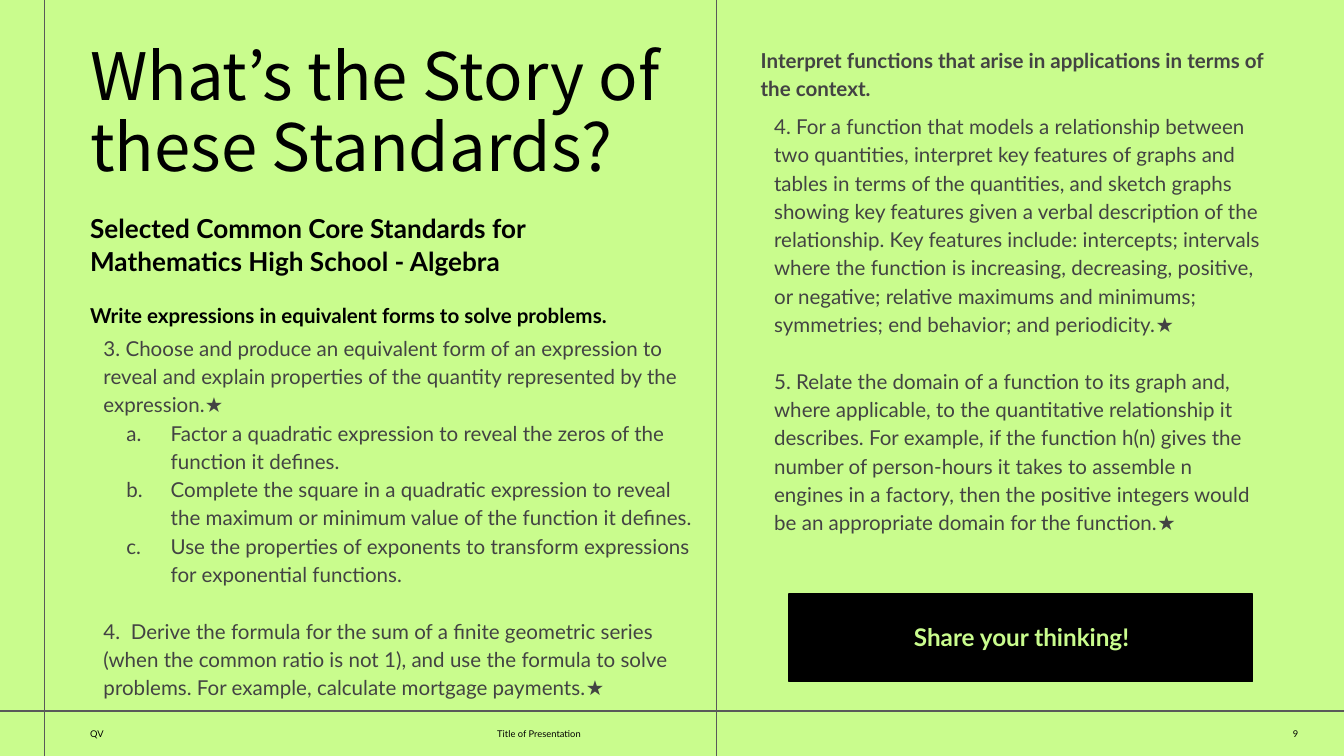
from collections import namedtuple

from lxml import etree
from pptx import Presentation
from pptx import util as u
from pptx.dml.color import RGBColor
from pptx.enum import shapes, text
from pptx.oxml import ns

LIME = RGBColor(0xC9, 0xFC, 0x8D)
BLACK = RGBColor(0, 0, 0)
INK = RGBColor(0x43, 0x43, 0x43)
RULE = RGBColor(0x59, 0x59, 0x59)

WIDTH = 10
HEIGHT = WIDTH * 9 / 16
FOOTER_TOP = 5.29

Box = namedtuple("Box", "left top width height")
Item = namedtuple("Item", "wording lettered gap", defaults=(False, 0))

TITLE = dict(name="Noto Sans CJK KR", size=u.Pt(35), bold=False)
SUBTITLE = dict(name="Lato", size=u.Pt(14), bold=True)
HEADING = dict(name="Lato", size=u.Pt(11), bold=True)
BODY = dict(name="Lato", size=u.Pt(11), bold=False)
BUTTON = dict(name="Lato", size=u.Pt(13), bold=True)
FOOTER = dict(name="Lato", size=u.Pt(5), bold=False)

PARAGRAPH_GAP = 15.2

ALGEBRA = [
    Item("3. Choose and produce an equivalent form of an expression to reveal and explain "
         "properties of the quantity represented by the expression.★"),
    Item("Factor a quadratic expression to reveal the zeros of the function it defines.", True),
    Item("Complete the square in a quadratic expression to reveal the maximum or minimum "
         "value of the function it defines.", True),
    Item("Use the properties of exponents to transform expressions for exponential "
         "functions.", True),
    Item("4.  Derive the formula for the sum of a finite geometric series (when the common "
         "ratio is not 1), and use the formula to solve problems. For example, calculate "
         "mortgage payments.★", gap=PARAGRAPH_GAP),
]
FUNCTIONS = [
    Item("4. For a function that models a relationship between two quantities, interpret key "
         "features of graphs and tables in terms of the quantities, and sketch graphs showing "
         "key features given a verbal description of the relationship. Key features include: "
         "intercepts; intervals where the function is increasing, decreasing, positive, or "
         "negative; relative maximums and minimums; symmetries; end behavior; and "
         "periodicity.★"),
    Item("5. Relate the domain of a function to its graph and, where applicable, to the "
         "quantitative relationship it describes. For example, if the function h(n) gives the "
         "number of person-hours it takes to assemble n engines in a factory, then the "
         "positive integers would be an appropriate domain for the function.★",
         gap=PARAGRAPH_GAP),
]


def apply(target, values):
    for attribute, value in values.items():
        setattr(target, attribute, value)


def inches(box):
    return [u.Inches(length) for length in box]


def set_bullet(paragraph, lettered):
    properties = paragraph._p.get_or_add_pPr()
    properties.set("marL", str(u.Inches(0.5 if lettered else 0)))
    properties.set("indent", str(u.Inches(-0.33 if lettered else 0)))
    if lettered:
        color = etree.SubElement(properties, ns.qn("a:buClr"))
        etree.SubElement(color, ns.qn("a:srgbClr"), val=str(INK))
        etree.SubElement(properties, ns.qn("a:buFont"), typeface="Lato")
        etree.SubElement(properties, ns.qn("a:buAutoNum"), type="alphaLcPeriod")
    else:
        etree.SubElement(properties, ns.qn("a:buNone"))


def write(holder, box, items, font, color=BLACK, spacing=1.0, inset=(0, 0, 0, 0),
          align=text.PP_ALIGN.LEFT, anchor=text.MSO_ANCHOR.TOP):
    apply(holder, dict(zip(("left", "top", "width", "height"), inches(box))))
    frame = holder.text_frame
    margins = ("margin_left", "margin_top", "margin_right", "margin_bottom")
    apply(frame, dict(zip(margins, inches(inset))))
    apply(frame, dict(word_wrap=True, auto_size=text.MSO_AUTO_SIZE.NONE,
                      vertical_anchor=anchor))
    for index, item in enumerate(items):
        paragraph = frame.add_paragraph() if index else frame.paragraphs[0]
        set_bullet(paragraph, item.lettered)
        apply(paragraph, dict(alignment=align, line_spacing=spacing,
                              space_before=u.Pt(item.gap), space_after=u.Pt(0)))
        run = paragraph.add_run()
        run.text = item.wording
        apply(run.font, font)
        run.font.color.rgb = color


def add_label(slide, box, wording, font, **layout):
    write(slide.shapes.add_textbox(*inches(box)), box, [Item(wording)], font, **layout)


def add_rule(slide, *ends):
    rule = slide.shapes.add_connector(shapes.MSO_CONNECTOR.STRAIGHT, *inches(ends))
    rule.line.color.rgb = RULE
    rule.line.width = u.Pt(0.75)
    etree.SubElement(rule._element.spPr, ns.qn("a:effectLst"))


def build_grid(slide, box):
    right, bottom = box.left + box.width, box.top + box.height
    add_rule(slide, box.left, FOOTER_TOP, right, FOOTER_TOP)
    for x in (0.33, 5.33):
        add_rule(slide, x, bottom, x, box.top)


def build_footer(slide, box):
    step = box.width / 3 + 0.03
    left, right = text.PP_ALIGN.LEFT, text.PP_ALIGN.RIGHT
    parts = [("QV", left), ("Title of Presentation", left), ("9", right)]
    for column, (wording, align) in enumerate(parts):
        cell = Box(box.left + column * step, box.top, 2.93, box.height)
        add_label(slide, cell, wording, FOOTER, align=align, anchor=text.MSO_ANCHOR.MIDDLE)


def build_algebra(slide, box):
    x, y = box.left, box.top
    write(slide.shapes.title, Box(x, y, 4.41, 1.06),
          [Item("What’s the Story of these Standards?")], TITLE, spacing=0.9)
    add_label(slide, Box(x, y + 1.24, 4.41, 0.48),
              "Selected Common Core Standards for Mathematics High School - Algebra",
              SUBTITLE, spacing=1.05)
    add_label(slide, Box(x, y + 1.9, 4.17, 0.19),
              "Write expressions in equivalent forms to solve problems.",
              HEADING, spacing=1.15)
    write(slide.placeholders[1], Box(x, y + 2.14, box.width, 2.74), ALGEBRA, BODY,
          color=INK, spacing=1.15, inset=(0.1, 0, 0, 0))


def build_functions(slide, box):
    x, y = box.left, box.top
    add_label(slide, Box(x, y, box.width, 0.4),
              "Interpret functions that arise in applications in terms of the context.",
              HEADING, color=INK, spacing=1.15)
    write(slide.placeholders[2], Box(x, y + 0.49, 3.72, 3.38), FUNCTIONS, BODY,
          color=INK, spacing=1.15, inset=(0.1, 0, 0, 0))


def build_button(slide, box):
    button = slide.shapes.add_shape(shapes.MSO_SHAPE.RECTANGLE, *inches(box))
    button.shadow.inherit = False
    button.fill.solid()
    button.fill.fore_color.rgb = BLACK
    button.line.color.rgb = BLACK
    button.line.width = u.Pt(0.75)
    add_label(slide, Box(box.left + 0.24, box.top + 0.11, 2.98, 0.42),
              "Share your thinking!", BUTTON, color=LIME, inset=(0.1,) * 4,
              align=text.PP_ALIGN.CENTER)


def main():
    deck = Presentation()
    deck.slide_width, deck.slide_height = u.Inches(WIDTH), u.Inches(HEIGHT)
    slide = deck.slides.add_slide(deck.slide_layouts.get_by_name("Two Content"))
    slide.background.fill.solid()
    slide.background.fill.fore_color.rgb = LIME
    build_grid(slide, Box(0, 0, WIDTH, HEIGHT))
    build_footer(slide, Box(0.67, FOOTER_TOP, 9, 0.34))
    build_algebra(slide, Box(0.67, 0.33, 4.58, 4.88))
    build_functions(slide, Box(5.66, 0.33, 3.84, 3.87))
    build_button(slide, Box(5.87, 4.42, 3.45, 0.65))
    deck.save("out.pptx")


if __name__ == "__main__":
    main()
